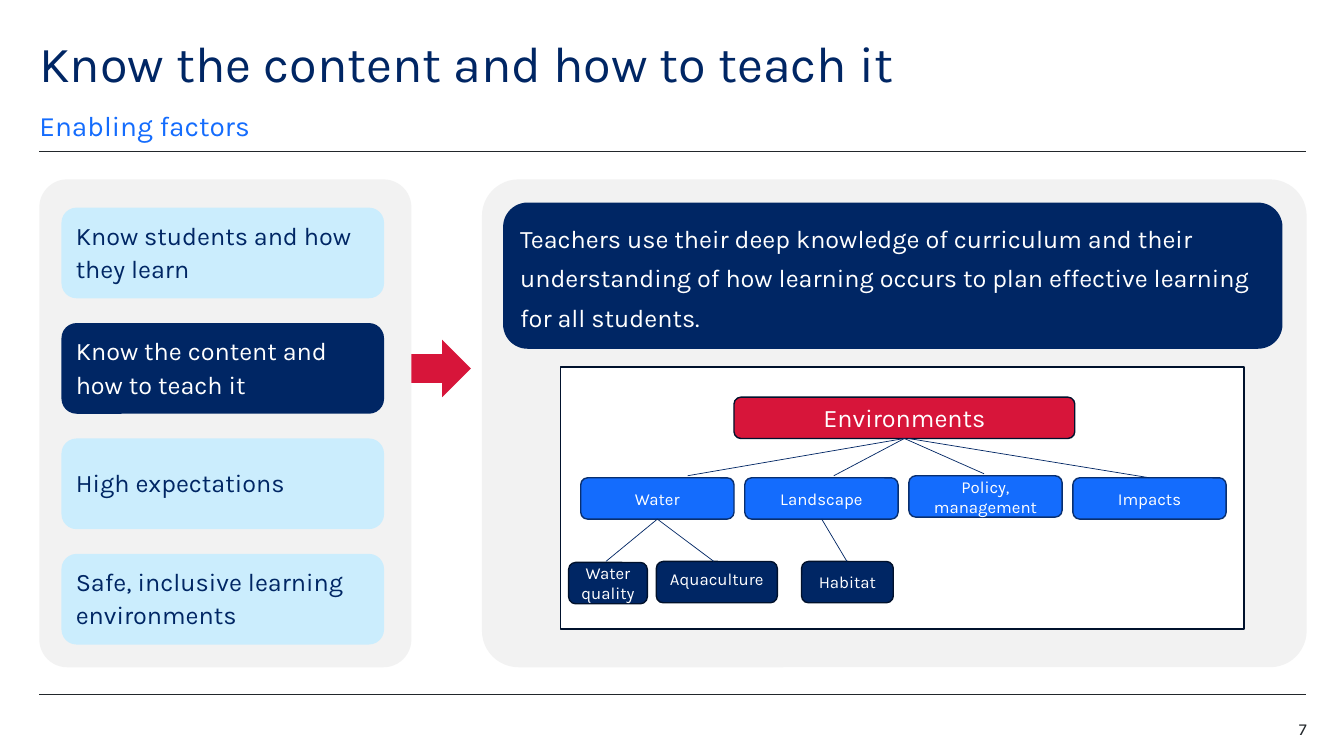
from lxml.etree import SubElement
from pptx import Presentation
from pptx.dml.color import RGBColor
from pptx.enum.shapes import MSO_CONNECTOR, MSO_SHAPE
from pptx.enum.text import MSO_ANCHOR, PP_ALIGN
from pptx.oxml.ns import qn
from pptx.util import Inches, Pt

NAVY, BLUE, RED, SKY = "002664", "146CFD", "D7153A", "CBEDFD"
WHITE, GREY, INK = "FFFFFF", "F2F2F2", "22272B"
NAVY_EDGE, BLUE_EDGE = "00112C", "092F6F"
NODE_INSETS = (1, 0.5, 1, 0.5)
CARD_INSETS = (1, 0, 1, 0.5)
NO_INSETS = (0, 0, 0, 0)


def color(hex_code):
    return RGBColor.from_string(hex_code)


class TeachingSlide:
    font = "Karla"
    columns, rows = 133.3, 75

    def __init__(self, deck):
        deck.slide_width, deck.slide_height = Inches(13.33), Inches(7.5)
        self.column = deck.slide_width / self.columns
        self.row = deck.slide_height / self.rows
        self.slide = deck.slides.add_slide(deck.slide_layouts[5])

    def x(self, columns):
        return round(columns * self.column)

    def y(self, rows):
        return round(rows * self.row)

    def area(self, left, top, width, height):
        return self.x(left), self.y(top), self.x(width), self.y(height)

    def set_wording(self, shape, wording, size, ink, insets=NO_INSETS, align=PP_ALIGN.LEFT,
                    anchor=MSO_ANCHOR.TOP, spacing=1.0):
        frame = shape.text_frame
        frame.word_wrap = True
        frame.vertical_anchor = anchor
        left, top, right, bottom = insets
        frame.margin_left, frame.margin_right = self.x(left), self.x(right)
        frame.margin_top, frame.margin_bottom = self.y(top), self.y(bottom)
        paragraph = frame.paragraphs[0]
        paragraph.alignment = align
        paragraph.line_spacing = spacing
        run = paragraph.add_run()
        run.text = wording
        run.font.name, run.font.size = self.font, Pt(size)
        run.font.color.rgb = color(ink)

    def title(self, place, wording):
        heading = self.slide.shapes.title
        heading.left, heading.top, heading.width, heading.height = self.area(*place)
        self.set_wording(heading, wording, 36, NAVY, spacing=0.9)

    def text(self, place, wording, size, ink, **style):
        label = self.slide.shapes.add_textbox(*self.area(*place))
        self.set_wording(label, wording, size, ink, **style)

    def box(self, place, fill, edge=None, kind=MSO_SHAPE.ROUNDED_RECTANGLE, corner=None):
        shape = self.slide.shapes.add_shape(kind, *self.area(*place))
        shape.shadow.inherit = False
        shape.fill.solid()
        shape.fill.fore_color.rgb = color(fill)
        if edge:
            shape.line.color.rgb = color(edge)
            shape.line.width = Pt(1)
        else:
            shape.line.fill.background()
        if corner:
            shape.adjustments[0] = corner
        return shape

    def card(self, place, wording, fill, ink, spacing):
        self.set_wording(self.box(place, fill), wording, 18, ink, insets=CARD_INSETS,
                         anchor=MSO_ANCHOR.MIDDLE, spacing=spacing)

    def node(self, place, wording, fill, edge, size=12, anchor=MSO_ANCHOR.MIDDLE):
        self.set_wording(self.box(place, fill, edge), wording, size, WHITE,
                         insets=NODE_INSETS, align=PP_ALIGN.CENTER, anchor=anchor)

    def line(self, start, end, ink):
        connector = self.slide.shapes.add_connector(
            MSO_CONNECTOR.STRAIGHT, self.x(start[0]), self.y(start[1]),
            self.x(end[0]), self.y(end[1]))
        connector.line.color.rgb = color(ink)
        connector.line.width = Pt(0.5)
        SubElement(connector.element.spPr, qn("a:effectLst"))


def build():
    deck = Presentation()
    page = TeachingSlide(deck)
    margin, right_edge = 3.9, 129.5

    for rule in (15, 68.9):
        page.line((margin, rule), (right_edge, rule), INK)
    page.title((margin, 3.9, 110.2, 6), "Know the content and how to teach it")
    page.text((margin, 10.7, 110.2, 3.4), "Enabling factors", 20, BLUE,
              anchor=MSO_ANCHOR.BOTTOM, spacing=1.5)
    page.text((121.7, 71.3, 7.9, 2), "7", 12, INK, align=PP_ALIGN.RIGHT)

    for left, width in ((margin, 36.9), (47.8, 81.8)):
        page.box((left, 17.8, width, 48.4), GREY, corner=0.075)

    factors = ["Know students and how they learn", "Know the content and how to teach it",
               "High expectations", "Safe, inclusive learning environments"]
    current_factor = 1
    for index, factor in enumerate(factors):
        fill, ink = (NAVY, WHITE) if index == current_factor else (SKY, NAVY)
        page.card((6.1, 20.6 + 11.45 * index, 32, 9), factor, fill, ink, 1.1)

    page.box((40.8, 33.7, 5.9, 5.7), RED, kind=MSO_SHAPE.RIGHT_ARROW)
    page.card((49.9, 20.1, 77.3, 14.5),
              "Teachers use their deep knowledge of curriculum and their understanding of "
              "how learning occurs to plan effective learning for all students.",
              NAVY, WHITE, 1.3)

    page.box((55.6, 36.4, 67.8, 26), WHITE, NAVY_EDGE, MSO_SHAPE.RECTANGLE)
    node_height = 4.1
    page.node((72.8, 39.4, 33.8, node_height), "Environments", RED, NAVY_EDGE, 18)

    topics = [("Water", 47.4), ("Landscape", 47.4), ("Policy, management", 47.2),
              ("Impacts", 47.4)]
    for index, (topic, top) in enumerate(topics):
        page.node((57.6 + 16.27 * index, top, 15.2, node_height), topic, BLUE, BLUE_EDGE)

    subtopics = [("Water quality", 56.4, 55.8, 7.8, MSO_ANCHOR.MIDDLE),
                 ("Aquaculture", 65.1, 55.7, 12, MSO_ANCHOR.TOP),
                 ("Habitat", 79.5, 55.7, 9.1, MSO_ANCHOR.MIDDLE)]
    for subtopic, left, top, width, anchor in subtopics:
        page.node((left, top, width, node_height), subtopic, NAVY, NAVY_EDGE, anchor=anchor)

    branches = {
        (89.7, 43.5): [(68.2, 47.2), (82.7, 47.2), (97.6, 47)],
        (90.1, 43.5): [(114, 47.4)],
        (65.2, 51.5): [(60.1, 55.7), (70.8, 55.7)],
        (81.5, 51.5): [(84, 55.7)],
    }
    for parent, children in branches.items():
        for child in children:
            page.line(parent, child, NAVY)

    deck.save("out.pptx")


if __name__ == "__main__":
    build()
